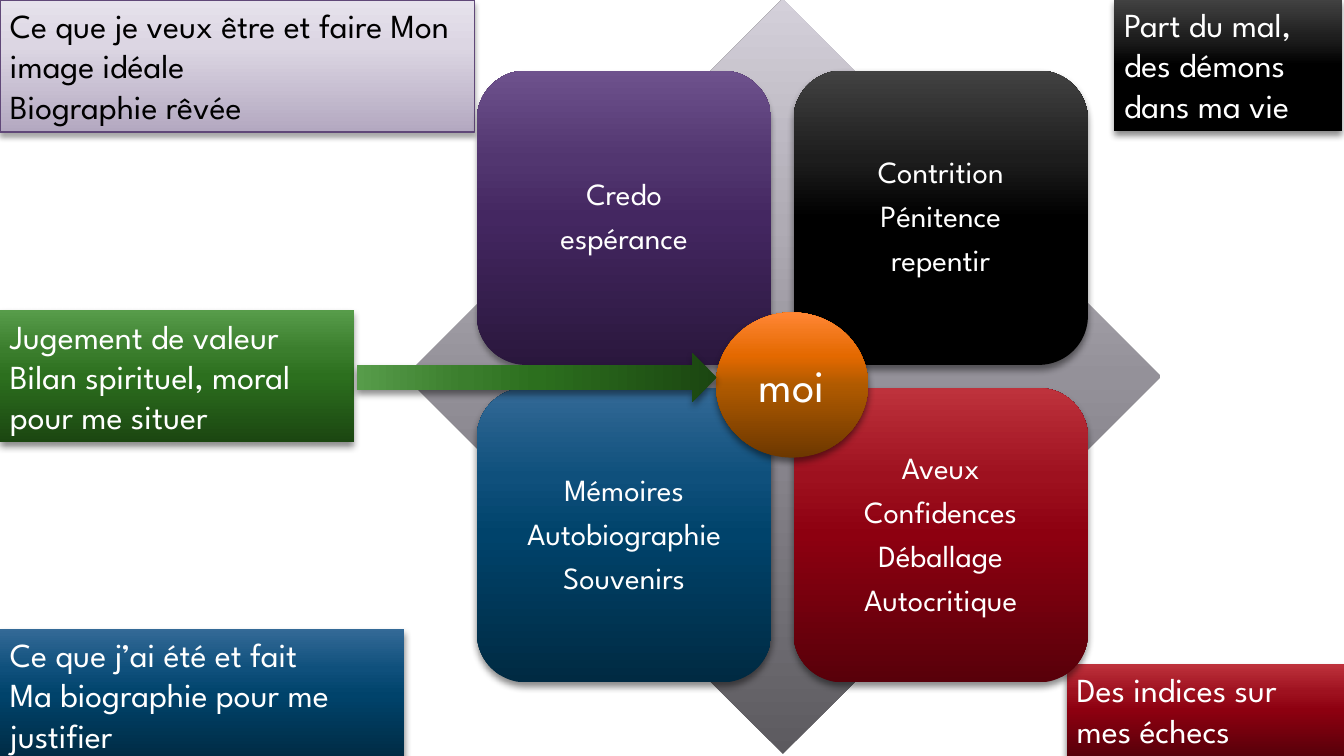
from lxml.etree import SubElement
from pptx import Presentation
from pptx.dml.color import RGBColor
from pptx.enum.shapes import MSO_SHAPE as Shape
from pptx.enum.text import MSO_ANCHOR as Anchor, PP_ALIGN as Align
from pptx.oxml.ns import qn
from pptx.util import Inches, Pt

FONT = "League Spartan"
COLOURS = {"white": "FFFFFF", "black": "000000", "violet": "604878"}
GRADIENTS = {
    "green": {0: "1B4611", 50: "2C6F1E", 70: "3B7E2D", 100: "579C4A"},
    "lilac": {0: "B3A8C0", 65: "DCD6E3", 100: "E6E2EC"},
    "blue": {0: "002A42", 50: "00436B", 70: "0F507C", 100: "346A97"},
    "black": {0: "000000", 70: "1D1D1D", 50: "000000", 100: "424242"},
    "red": {0: "58000A", 50: "8D0010", 70: "9E111F", 100: "BE323C"},
    "grey": {0: "5C5A5F", 50: "949199", 70: "AFABB4", 100: "D4D0DA"},
    "purple": {0: "2A173D", 50: "442761", 70: "523670", 100: "6E528D"},
    "orange": {0: "6D3800", 50: "B05A00", 70: "E46900", 100: "FF8634"},
}
STRONG_SHADOW = {"opacity": 45, "blur": 5}
SOFT_SHADOW = {"opacity": 35, "blur": 4}

LABELS = [
    ((0, 3.08, 3.51, 1.31), "green",
     ["Jugement de valeur", "Bilan spirituel, moral", "pour me situer"]),
    ((0, 0, 4.71, 1.31), "lilac",
     ["Ce que je veux être et faire Mon image idéale", "Biographie rêvée"]),
    ((0, 6.24, 4.01, 1.31), "blue",
     ["Ce que j’ai été et fait", "Ma biographie pour me justifier"]),
    ((11.05, -0.01, 2.26, 1.31), "black", ["Part du mal, des démons dans ma vie"]),
    ((10.58, 6.59, 2.75, 0.91), "red", ["Des indices sur mes échecs"]),
]
TILES = [
    ("purple", ["Credo", "espérance"]),
    ("black", ["Contrition", "Pénitence", "repentir"]),
    ("blue", ["Mémoires", "Autobiographie", "Souvenirs"]),
    ("red", ["Aveux", "Confidences", "Déballage", "Autocritique"]),
]
TILE_LEFT, TILE_TOP, TILE_SIZE = 4.73, 0.7, 2.92
TILE_STEP_X, TILE_STEP_Y = 3.14, 3.15


def set_gradient(shape, gradient):
    """Fill a shape with a gradient whose first stop is at the bottom."""
    shape.fill.gradient()
    properties = shape._element.spPr
    stops = properties.find(".//" + qn("a:gsLst"))
    stops.clear()
    for position, colour in sorted(GRADIENTS[gradient].items()):
        stop = SubElement(stops, qn("a:gs"), pos=str(position * 1000))
        SubElement(stop, qn("a:srgbClr"), val=colour)
    properties.find(".//" + qn("a:lin")).set("ang", str(270 * 60000))


def set_shadow(shape, opacity, blur):
    """Give a shape a black shadow that falls straight down."""
    effects = shape._element.spPr.find(qn("a:effectLst"))
    shadow = SubElement(
        effects, qn("a:outerShdw"), blurRad=str(Pt(blur)), dist=str(Pt(3)),
        dir=str(90 * 60000), rotWithShape="0")
    colour = SubElement(shadow, qn("a:srgbClr"), val=COLOURS["black"])
    SubElement(colour, qn("a:alpha"), val=str(opacity * 1000))


def add_figure(page, kind, place, gradient, shadow=None, line=None):
    """Add a preset shape with a gradient, and return it."""
    shape = page.shapes.add_shape(kind, *map(Inches, place))
    set_gradient(shape, gradient)
    if line:
        shape.line.color.rgb = RGBColor.from_string(COLOURS[line])
        shape.line.width = Pt(0.75)
    else:
        shape.line.fill.background()
    shape.shadow.inherit = False
    if shadow:
        set_shadow(shape, **shadow)
    return shape


def write(shape, lines, size=24, colour="white", align=Align.LEFT,
          anchor=Anchor.TOP, spacing=None, after=None, inset=None):
    """Write one paragraph per line of text into a shape."""
    frame = shape.text_frame
    frame.word_wrap = True
    frame.vertical_anchor = anchor
    if inset is not None:
        frame.margin_left = frame.margin_right = Inches(inset)
        frame.margin_top = frame.margin_bottom = Inches(inset)
    for index, line in enumerate(lines):
        para = frame.add_paragraph() if index else frame.paragraphs[0]
        para.alignment = align
        para.line_spacing = spacing
        para.space_after = after
        span = para.add_run()
        span.text = line
        span.font.name = FONT
        span.font.size = Pt(size)
        span.font.color.rgb = RGBColor.from_string(COLOURS[colour])


def add_label(page, place, gradient, lines):
    """Add a caption box at the edge of the page."""
    light = gradient == "lilac"
    box = add_figure(page, Shape.RECTANGLE, place, gradient,
                     SOFT_SHADOW if light else STRONG_SHADOW,
                     line="violet" if light else None)
    write(box, lines, colour="black" if light else "white")


def add_tile(page, index, gradient, lines):
    """Add one rounded tile of the two by two matrix."""
    row, column = divmod(index, 2)
    place = (TILE_LEFT + column * TILE_STEP_X, TILE_TOP + row * TILE_STEP_Y,
             TILE_SIZE, TILE_SIZE)
    shadow = SOFT_SHADOW if gradient == "purple" else STRONG_SHADOW
    tile = add_figure(page, Shape.ROUNDED_RECTANGLE, place, gradient, shadow)
    write(tile, lines, size=22, align=Align.CENTER, anchor=Anchor.MIDDLE,
          spacing=0.9, after=Pt(7.7), inset=0.09)


def main():
    """Build the slide and save it."""
    deck = Presentation()
    deck.slide_width, deck.slide_height = Inches(13.33), Inches(7.5)
    page = deck.slides.add_slide(deck.slide_layouts[6])
    for place, gradient, lines in LABELS:
        add_label(page, place, gradient, lines)
    add_figure(page, Shape.DIAMOND, (4.02, -0.01, 7.49, 7.49), "grey")
    for index, (gradient, lines) in enumerate(TILES):
        add_tile(page, index, gradient, lines)
    centre = add_figure(page, Shape.OVAL, (7.1, 3.1, 1.51, 1.44), "orange", STRONG_SHADOW)
    write(centre, ["moi"], size=32, align=Align.CENTER, anchor=Anchor.MIDDLE)
    arrow = add_figure(page, Shape.DOWN_ARROW, (5.08, 1.96, 0.49, 3.57), "green", STRONG_SHADOW)
    arrow.rotation = 270
    deck.save("out.pptx")


if __name__ == "__main__":
    main()
